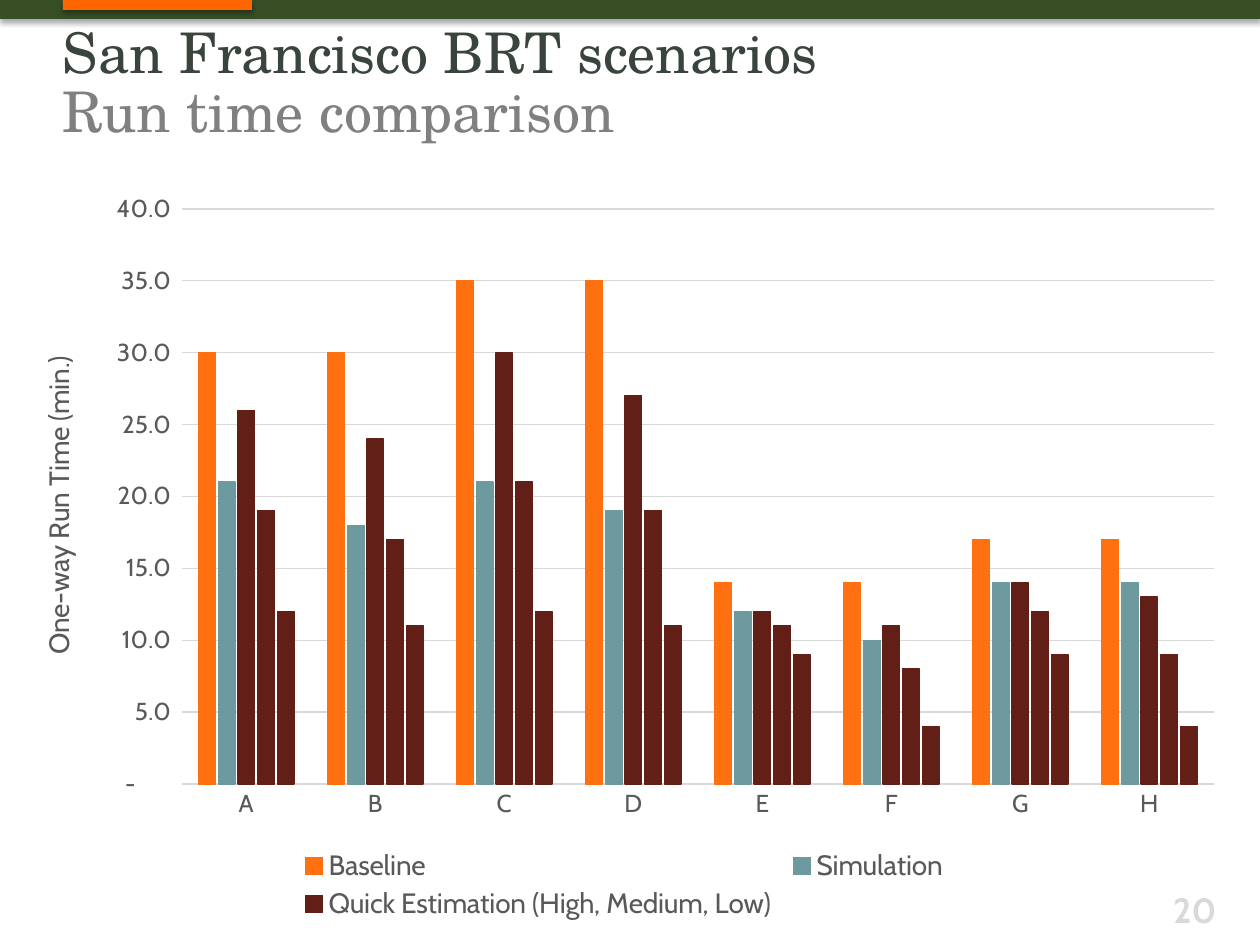
from lxml import etree
from pptx import Presentation
from pptx.chart.data import CategoryChartData as Data
from pptx.dml.color import RGBColor
from pptx.enum.chart import XL_CHART_TYPE as Kind, XL_LEGEND_POSITION as Pos, XL_TICK_MARK as Tick
from pptx.enum.shapes import MSO_SHAPE as Shape
from pptx.enum.text import PP_ALIGN as Align
from pptx.oxml import parse_xml
from pptx.oxml.ns import nsdecls, qn
from pptx.util import Cm, Pt

# Content
COLORS = {
    "green": "384F26", "tab": "FF6600", "title": "38443C", "sub": "808080",
    "pale": "D9D9D9", "text": "595959", "black": "000000",
    "orange": "FF7010", "teal": "6D9A9F", "maroon": "621F18",
}
TITLE = [("San Francisco BRT scenarios", "title"), ("Run time comparison", "sub")]
NUMBER = [("20", "pale")]
AXIS = "One-way Run Time (min.)"
FORMAT = r'_(* #,##0.0_);_(* \(#,##0.0\);_(* "-"??_);_(@_)'
CATS = list("ABCDEFGH")
SERIES = [
    ("Baseline", "orange", [30, 30, 35, 35, 14, 14, 17, 17]),
    ("Simulation", "teal", [21, 18, 21, 19, 12, 10, 14, 14]),
    ("Series 3", "maroon", [26, 24, 30, 27, 12, 11, 14, 13]),
    ("Quick Estimation (High, Medium, Low)", "maroon", [19, 17, 21, 19, 11, 8, 12, 9]),
    ("Series 5", "maroon", [12, 11, 12, 11, 9, 4, 9, 4]),
]
HIDDEN = [2, 4]
BARS = [("green", 0, 25.4, 0.38), ("tab", 1.27, 3.81, 0.2)]

deck = Presentation()
deck.slide_width, deck.slide_height = Cm(25.4), Cm(19.05)
slide = deck.slides.add_slide(deck.slide_layouts[6])


def rgb(name):
    return RGBColor.from_string(COLORS[name])


def style(font, size, color, face="Cabin", bold=False):
    font.size, font.name, font.bold = Pt(size), face, bold
    font.color.rgb = rgb(color)


def write(lines, box, size, face="Cabin", bold=False, align=Align.LEFT, pitch=None, inset=None):
    frame = slide.shapes.add_textbox(*map(Cm, box)).text_frame
    frame.word_wrap = True
    if inset is not None:
        frame.margin_left = frame.margin_right = Cm(inset)
        frame.margin_top = frame.margin_bottom = Cm(inset)
    para = frame.paragraphs[0]
    para.alignment = align
    if pitch:
        para.line_spacing = Pt(pitch)
    for i, (text, color) in enumerate(lines):
        if i:
            para.add_line_break()
        run = para.add_run()
        run.text = text
        style(run.font, size, color, face, bold)


def place(node, index, **sides):
    """Give a chart part a fixed place, as shares of the chart."""
    for old in node.findall(qn("c:layout")):
        node.remove(old)
    modes = '<c:xMode val="edge"/><c:yMode val="edge"/>'
    if node.tag == qn("c:plotArea"):
        modes = '<c:layoutTarget val="inner"/>' + modes
    spots = "".join(f'<c:{key} val="{val}"/>' for key, val in sides.items())
    node.insert(index, parse_xml(
        f'<c:layout {nsdecls("c")}><c:manualLayout>{modes}{spots}</c:manualLayout></c:layout>'))


# Top bars with a soft shadow
for color, left, width, height in BARS:
    bar = slide.shapes.add_shape(Shape.RECTANGLE, Cm(left), 0, Cm(width), Cm(height))
    bar.fill.solid()
    bar.fill.fore_color.rgb = rgb(color)
    bar.line.fill.background()
    bar.shadow.inherit = False
    glow = bar.element.spPr.find(qn("a:effectLst"))
    glow.append(parse_xml(
        f'<a:outerShdw {nsdecls("a")} blurRad="{Pt(3.1)}" dist="{Pt(1.8)}" dir="5400000" '
        f'rotWithShape="0"><a:srgbClr val="{COLORS["black"]}"><a:alpha val="35000"/>'
        '</a:srgbClr></a:outerShdw>'))

# Title and page number
write(TITLE, (1.27, 0.51, 20.52, 2.24), 32, face="TeX Gyre Schola", pitch=34, inset=0)
write(NUMBER, (22.43, 17.78, 2.34, 0.89), 20, bold=True, align=Align.RIGHT)

# Chart
data = Data(number_format="0")
data.categories = CATS
for name, _, vals in SERIES:
    data.add_series(name, vals)
chart = slide.shapes.add_chart(
    Kind.COLUMN_CLUSTERED, *map(Cm, (0.2, 3.61, 24.77, 15.06)), data).chart
chart.has_title = False
style(chart.font, 10, "black")
plot = chart.plots[0]
plot.gap_width, plot.overlap, plot.vary_by_categories = 200, -17, False
for series, (_, color, _) in zip(plot.series, SERIES):
    series.format.fill.solid()
    series.format.fill.fore_color.rgb = rgb(color)
    series.format.line.color.rgb = rgb(color)
    series.format.line.width = Pt(0.75)
place(chart._chartSpace.chart.plotArea, 0, x=0.14, y=0.04, w=0.84, h=0.77)

# Axes
cat, val = chart.category_axis, chart.value_axis
for axis in (cat, val):
    axis.major_tick_mark = axis.minor_tick_mark = Tick.NONE
    style(axis.tick_labels.font, 14, "text")
val.minimum_scale, val.maximum_scale, val.major_unit = 0, 40, 5
val.tick_labels.number_format = FORMAT
val.tick_labels.number_format_is_linked = False
val.format.line.fill.background()
val.has_major_gridlines = True
for line in (cat.format.line, val.major_gridlines.format.line):
    line.color.rgb = rgb("pale")
    line.width = Pt(0.75)
frame = val.axis_title.text_frame
frame.text = AXIS
style(frame.paragraphs[0].runs[0].font, 16, "text")
body = frame._txBody.find(qn("a:bodyPr"))
body.set("rot", "-5400000")
body.set("vert", "horz")
place(val.axis_title._element, 1, x=0.02, y=0.23)

# Legend without the repeated maroon series
chart.has_legend = True
legend = chart.legend
legend.position, legend.include_in_layout = Pos.BOTTOM, False
style(legend.font, 16, "text")
node = legend._element
for i, index in enumerate(HIDDEN, 1):
    entry = etree.Element(qn("c:legendEntry"))
    etree.SubElement(entry, qn("c:idx")).set("val", str(index))
    etree.SubElement(entry, qn("c:delete")).set("val", "1")
    node.insert(i, entry)
place(node, 1 + len(HIDDEN), x=0.23, y=0.89, w=0.54, h=0.11)

deck.save("out.pptx")
